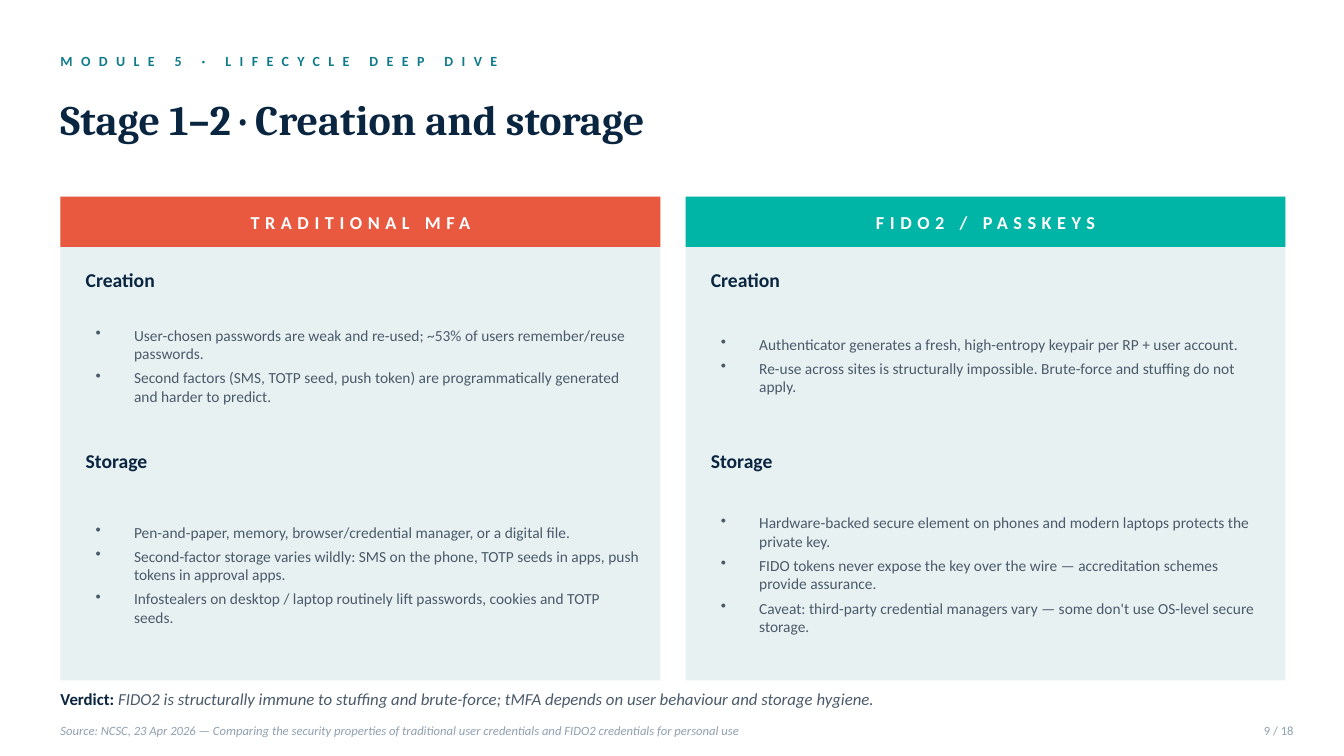
import pptx
import pptx.dml.color
import pptx.enum.shapes
import pptx.enum.text
import pptx.oxml.ns
import pptx.util
import lxml.etree

RGBColor = pptx.dml.color.RGBColor
Align = pptx.enum.text.PP_ALIGN

NAVY = RGBColor(0x0A, 0x25, 0x40)
TEAL = RGBColor(0x0F, 0x7B, 0x8A)
SLATE = RGBColor(0x4A, 0x5A, 0x6A)
MUTED = RGBColor(0x8F, 0xA0, 0xB0)
PANEL = RGBColor(0xE8, 0xF1, 0xF2)
CORAL = RGBColor(0xE8, 0x59, 0x3F)
GREEN = RGBColor(0x00, 0xB4, 0xA6)
WHITE = RGBColor(0xFF, 0xFF, 0xFF)

EMU_PER_PX = 9144
LEFT = 60
PANEL_TOP = 195
PANEL_WIDTH = 595
PANEL_GAP = 25
SECTIONS = (("Creation", 260, 135), ("Storage", 440, 190))
COLUMNS = (
    ("TRADITIONAL MFA", CORAL, (
        ("User-chosen passwords are weak and re-used; ~53% of users remember/reuse passwords.",
         "Second factors (SMS, TOTP seed, push token) are programmatically generated and harder to predict."),
        ("Pen-and-paper, memory, browser/credential manager, or a digital file.",
         "Second-factor storage varies wildly: SMS on the phone, TOTP seeds in apps, push tokens in approval apps.",
         "Infostealers on desktop / laptop routinely lift passwords, cookies and TOTP seeds."),
    )),
    ("FIDO2 / PASSKEYS", GREEN, (
        ("Authenticator generates a fresh, high-entropy keypair per RP + user account.",
         "Re-use across sites is structurally impossible. Brute-force and stuffing do not apply."),
        ("Hardware-backed secure element on phones and modern laptops protects the private key.",
         "FIDO tokens never expose the key over the wire — accreditation schemes provide assurance.",
         "Caveat: third-party credential managers vary — some don't use OS-level secure storage."),
    )),
)


def px(value):
    return pptx.util.Emu(value * EMU_PER_PX)


def prepare_frame(shape):
    frame = shape.text_frame
    frame.word_wrap = True
    frame.vertical_anchor = pptx.enum.text.MSO_ANCHOR.MIDDLE
    frame.margin_left = frame.margin_top = frame.margin_right = frame.margin_bottom = 0
    return frame


def add_frame(slide, left, top, width, height):
    return prepare_frame(slide.shapes.add_textbox(px(left), px(top), px(width), px(height)))


def style(font, size, color, bold=False, italic=False, name="Calibri"):
    font.name = name
    font.size = pptx.util.Pt(size)
    font.color.rgb = color
    font.bold = bold
    font.italic = italic


def write(frame, text, size, color, align=Align.LEFT, tracking=0, **font_options):
    paragraph = frame.paragraphs[0]
    paragraph.text = text
    paragraph.alignment = align
    style(paragraph.font, size, color, **font_options)
    if tracking:
        for run in paragraph.runs:
            run._r.get_or_add_rPr().set("spc", str(tracking * 100))


def add_rectangle(slide, left, top, width, height, color):
    shape = slide.shapes.add_shape(pptx.enum.shapes.MSO_SHAPE.RECTANGLE,
                                   px(left), px(top), px(width), px(height))
    shape.shadow.inherit = False
    shape.fill.solid()
    shape.fill.fore_color.rgb = color
    shape.line.fill.background()
    return shape


def add_bullets(slide, left, top, width, height, items):
    frame = add_frame(slide, left, top, width, height)
    for index, item in enumerate(items):
        paragraph = frame.add_paragraph() if index else frame.paragraphs[0]
        paragraph.text = item
        paragraph.space_after = pptx.util.Pt(4)
        properties = paragraph._p.get_or_add_pPr()
        properties.set("marL", str(px(38)))
        properties.set("indent", str(px(-38)))
        bullet = lxml.etree.SubElement(properties, pptx.oxml.ns.qn("a:buChar"))
        bullet.set("char", "•")
        style(paragraph.font, 11, SLATE)


def add_column(slide, left, title, color, bullet_groups):
    add_rectangle(slide, left, PANEL_TOP, PANEL_WIDTH, 480, PANEL)
    header = add_rectangle(slide, left, PANEL_TOP, PANEL_WIDTH, 50, color)
    write(prepare_frame(header), title, 13, WHITE, Align.CENTER, tracking=4, bold=True)
    for (heading, top, height), items in zip(SECTIONS, bullet_groups):
        write(add_frame(slide, left + 25, top, 560, 35), heading, 14, NAVY, bold=True)
        add_bullets(slide, left + 35, top + 35, 540, height, items)


def add_verdict(slide):
    paragraph = add_frame(slide, LEFT, 678, 1210, 30).paragraphs[0]
    label = paragraph.add_run()
    label.text = "Verdict: "
    style(label.font, 12, NAVY, bold=True)
    verdict = paragraph.add_run()
    verdict.text = ("FIDO2 is structurally immune to stuffing and brute-force; "
                    "tMFA depends on user behaviour and storage hygiene.")
    style(verdict.font, 12, SLATE, italic=True)


def main():
    presentation = pptx.Presentation()
    presentation.slide_width = px(1333)
    presentation.slide_height = px(750)
    slide = presentation.slides.add_slide(presentation.slide_layouts[6])

    write(add_frame(slide, LEFT, 45, 1200, 30), "MODULE 5 · LIFECYCLE DEEP DIVE",
          10, TEAL, tracking=6, bold=True)
    write(add_frame(slide, LEFT, 75, 1210, 85), "Stage 1–2 · Creation and storage",
          30, NAVY, bold=True, name="Cambria")
    for index, column in enumerate(COLUMNS):
        add_column(slide, LEFT + index * (PANEL_WIDTH + PANEL_GAP), *column)
    add_verdict(slide)
    write(add_frame(slide, LEFT, 710, 1050, 30),
          "Source: NCSC, 23 Apr 2026 — Comparing the security properties of traditional "
          "user credentials and FIDO2 credentials for personal use", 9, MUTED, italic=True)
    write(add_frame(slide, 1223, 710, 60, 30), "9 / 18", 9, MUTED, Align.RIGHT)
    presentation.save("out.pptx")


if __name__ == "__main__":
    main()
